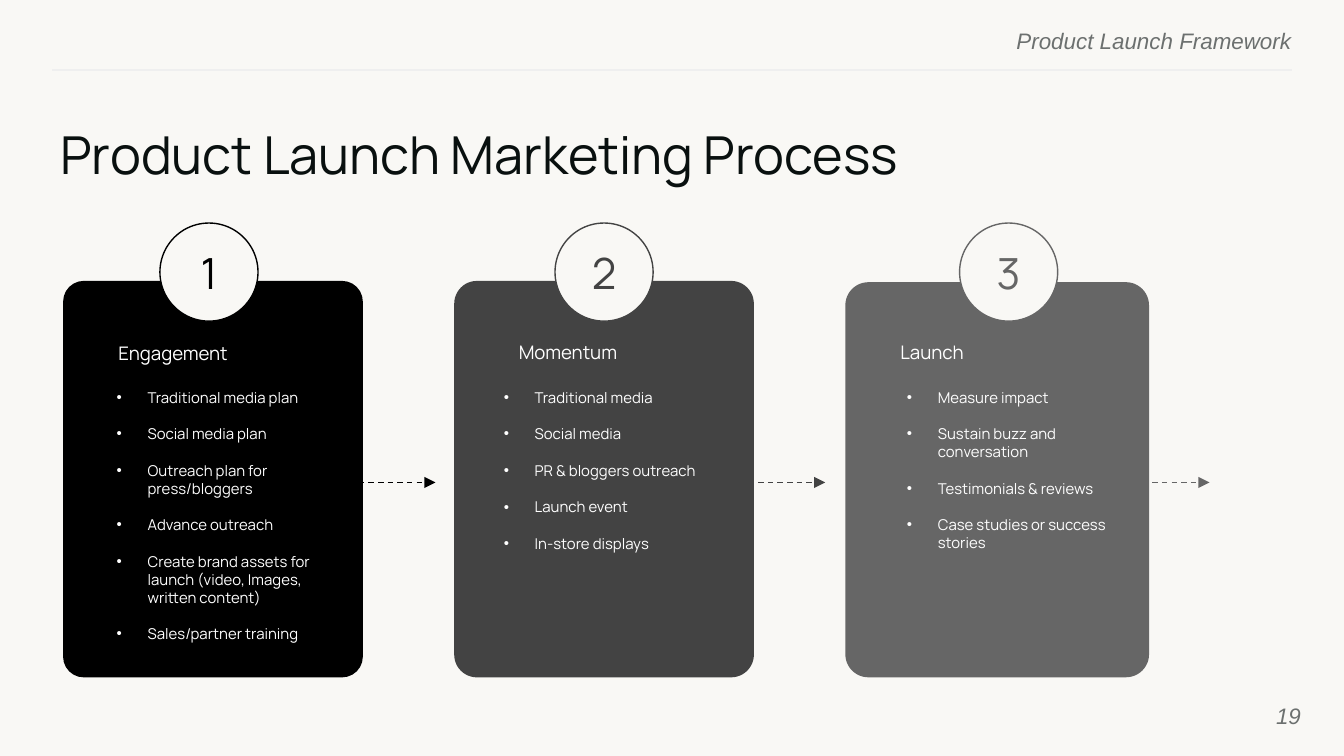
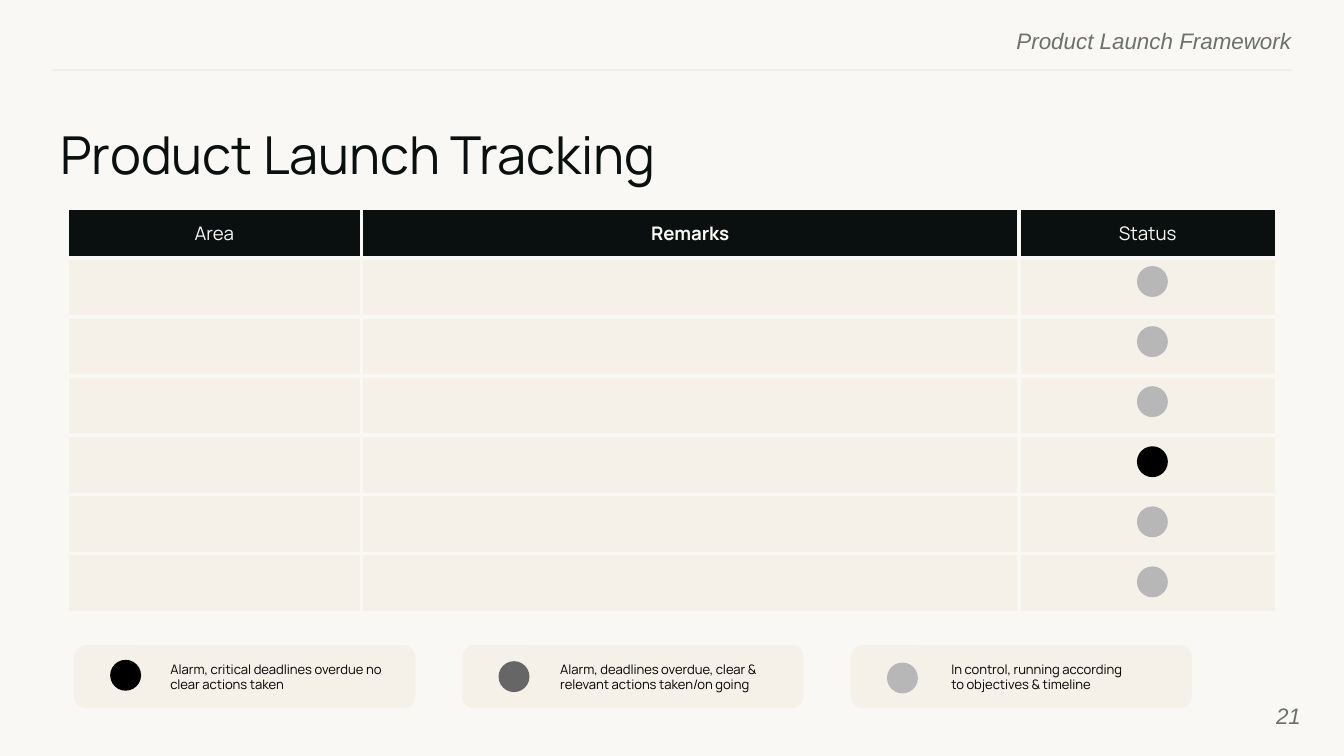
from dataclasses import dataclass

from lxml import etree
from pptx import Presentation
from pptx.dml.color import RGBColor
from pptx.enum import dml, shapes, text
from pptx.oxml import ns
from pptx.util import Inches, Pt


@dataclass(frozen=True)
class Theme:
    paper: str = "F9F8F5"
    ink: str = "09100F"
    sand: str = "F5F1E8"
    rule: str = "EFEFEF"
    note: str = "6C706F"
    white: str = "FFFFFF"
    black: str = "000000"
    dark: str = "434343"
    mid: str = "666666"
    pale: str = "B7B7B7"
    face: str = "Manrope"
    side: str = "Arial"
    title: float = 28
    digit: float = 23
    small: float = 12
    head: float = 10
    body: float = 8
    key: float = 7
    thin: float = 0.75
    gap: float = 2.25


T = Theme()
LEFT, MID, RIGHT = text.PP_ALIGN.LEFT, text.PP_ALIGN.CENTER, text.PP_ALIGN.RIGHT
TOP, CORE = text.MSO_ANCHOR.TOP, text.MSO_ANCHOR.MIDDLE
OVAL, ROUND = shapes.MSO_SHAPE.OVAL, shapes.MSO_SHAPE.ROUNDED_RECTANGLE

STEPS = [
    dict(box=(0.47, 2.09, 2.23, 2.95), curve=0.069, color=T.black, name="Engagement",
         head=(0.39, 0.37), list=(0.3, 1.81), disc=0.72, arrow=1.77,
         items=["Traditional media plan", "Social media plan",
                "Outreach plan for press/bloggers", "Advance outreach",
                "Create brand assets for launch (video, Images, written content)",
                "Sales/partner training"]),
    dict(box=(3.38, 2.09, 2.23, 2.95), curve=0.076, color=T.dark, name="Momentum",
         head=(0.46, 0.36), list=(0.27, 1.89), disc=0.75, arrow=1.76,
         items=["Traditional media", "Social media", "PR & bloggers outreach",
                "Launch event", "In-store displays"]),
    dict(box=(6.29, 2.1, 2.26, 2.94), curve=0.076, color=T.mid, name="Launch",
         head=(0.39, 0.35), list=(0.36, 1.7), disc=0.85, arrow=1.71,
         items=["Measure impact", "Sustain buzz and conversation",
                "Testimonials & reviews", "Case studies or success stories"]),
]
KEYS = [
    (T.black, 0.62, 1.8, ["Alarm, critical deadlines overdue no clear actions taken"]),
    (T.mid, 0.63, 1.99,
     ["Alarm, deadlines overdue, clear & relevant actions taken/on going"]),
    (T.pale, 0.65, 1.71, ["In control, running according", "to objectives & timeline"]),
]
STATES = [T.pale] * 3 + [T.black] + [T.pale] * 2


def tint(code):
    return RGBColor.from_string(code)


def fill(item, code):
    item.fill.solid()
    item.fill.fore_color.rgb = tint(code)


def write(frame, lines, size, color, face=T.face, align=LEFT, anchor=TOP,
          pad=(0, 0), bold=False, slant=False):
    frame.word_wrap = True
    frame.vertical_anchor = anchor
    frame.margin_left = frame.margin_right = Inches(pad[0])
    frame.margin_top = frame.margin_bottom = Inches(pad[1])
    for i, line in enumerate(lines):
        para = frame.add_paragraph() if i else frame.paragraphs[0]
        para.text = line
        para.alignment = align
        font = para.font
        font.name, font.size = face, Pt(size)
        font.bold, font.italic = bold, slant
        font.color.rgb = tint(color)
    return frame.paragraphs


def label(slide, box, lines, size, color, **style):
    area = slide.shapes.add_textbox(*map(Inches, box))
    return write(area.text_frame, lines, size, color, **style)


def block(slide, kind, box, color, edge=None, curve=None):
    shape = slide.shapes.add_shape(kind, *map(Inches, box))
    shape.shadow.inherit = False
    fill(shape, color)
    if edge:
        shape.line.color.rgb = tint(edge)
        shape.line.width = Pt(T.thin)
    else:
        shape.line.fill.background()
    if curve is not None:
        shape.adjustments[0] = curve
    return shape


def dot(slide, x, y, color):
    block(slide, OVAL, (x, y, 0.23, 0.23), color)


def rule(slide, start, end, y, color, arrow=False):
    wire = slide.shapes.add_connector(
        shapes.MSO_CONNECTOR.STRAIGHT, *map(Inches, (start, y, end, y)))
    wire.line.color.rgb = tint(color)
    wire.line.width = Pt(T.thin)
    if arrow:
        wire.line.dash_style = dml.MSO_LINE.DASH
        tip = etree.SubElement(wire.line._get_or_add_ln(), ns.qn("a:tailEnd"))
        tip.set("type", "triangle")
    etree.SubElement(wire._element.spPr, ns.qn("a:effectLst"))


def bullet(para, color):
    props = para._p.get_or_add_pPr()
    props.set("marL", str(Inches(0.23)))
    props.set("indent", str(-Inches(0.23)))
    hue = etree.Element(ns.qn("a:buClr"))
    etree.SubElement(hue, ns.qn("a:srgbClr")).set("val", color)
    face = etree.Element(ns.qn("a:buFont"))
    face.set("typeface", T.side)
    mark = etree.Element(ns.qn("a:buChar"))
    mark.set("char", "•")
    base = props.find(ns.qn("a:defRPr"))
    for part in (hue, face, mark):
        base.addprevious(part)


def border(cell, color):
    props = cell._tc.get_or_add_tcPr()
    for i, side in enumerate(("lnL", "lnR", "lnT", "lnB")):
        line = etree.Element(ns.qn("a:" + side))
        line.set("w", str(Pt(T.gap)))
        paint = etree.SubElement(line, ns.qn("a:solidFill"))
        etree.SubElement(paint, ns.qn("a:srgbClr")).set("val", color)
        props.insert(i, line)


def frame(deck, title, number):
    slide = deck.slides.add_slide(deck.slide_layouts[6])
    fill(slide.background, T.paper)
    side = dict(face=T.side, align=RIGHT, slant=True)
    label(slide, (5.76, 0.2, 3.85, 0.18), ["Product Launch Framework"],
          T.small, T.note, **side)
    rule(slide, 9.61, 0.39, 0.52, T.rule)
    label(slide, (0.45, 0.91, 9.23, 0.51), [title], T.title, T.ink)
    label(slide, (9.08, 5.11, 0.6, 0.43), [number], T.small, T.note,
          anchor=CORE, **side)
    return slide


def card(slide, step, number):
    x, y = step["box"][:2]
    color = step["color"]
    start = x + step["arrow"]
    rule(slide, start, start + 1, 3.59, color, arrow=True)
    block(slide, ROUND, step["box"], color, curve=step["curve"])
    left, down = step["head"]
    head = label(slide, (x + left, y + down, 1.39, 0.3), [step["name"]],
                 T.head, T.white, anchor=CORE, pad=(0.02, 0.02))
    head[0].line_spacing = 1.2
    left, span = step["list"]
    items = label(slide, (x + left, 2.84, span, 2.1), step["items"],
                  T.body, T.white, pad=(0.1, 0.05))
    for i, para in enumerate(items):
        para.space_before = Pt(10 if i else 0)
        bullet(para, T.white)
    items[-1].space_after = Pt(10)
    disc = block(slide, OVAL, (x + step["disc"], 1.66, 0.73, 0.73), T.paper, color)
    write(disc.text_frame, [str(number)], T.digit, color, align=MID,
          anchor=CORE, pad=(0.1, 0.1))


def track(slide, x, y):
    cols, rows = (2.19, 4.89, 1.92), [0.37] + [0.44] * len(STATES)
    grid = slide.shapes.add_table(
        len(rows), len(cols), *map(Inches, (x, y, sum(cols), sum(rows)))).table
    for col, width in zip(grid.columns, cols):
        col.width = Inches(width)
    for row, height in zip(grid.rows, rows):
        row.height = Inches(height)
    for i, row in enumerate(grid.rows):
        for cell in row.cells:
            fill(cell, T.sand if i else T.ink)
            border(cell, T.paper)
            cell.margin_left = cell.margin_right = Inches(0.07)
            cell.margin_top = cell.margin_bottom = Inches(0.04)
            cell.vertical_anchor = CORE
    for cell, name in zip(grid.rows[0].cells, ("Area", "Remarks", "Status")):
        para = cell.text_frame.paragraphs[0]
        para.text = name
        para.alignment = MID
        font = para.font
        font.name, font.size = T.face, Pt(T.head)
        font.bold = name == "Remarks"
        font.color.rgb = tint(T.paper)
    for i, color in enumerate(STATES):
        dot(slide, x + 7.96, y + 0.43 + 0.447 * i, color)


def legend(slide, x, y):
    for i, (color, left, width, lines) in enumerate(KEYS):
        start = x + 2.89 * i
        block(slide, ROUND, (start, y, 2.54, 0.47), T.sand, curve=0.195)
        dot(slide, start + 0.27, y + 0.11 + 0.01 * i, color)
        label(slide, (start + left, y + 0.07, width, 0.34), lines,
              T.key, T.black, pad=(0.1, 0.05))


def process(deck):
    slide = frame(deck, "Product Launch Marketing Process", "19")
    for i, step in enumerate(STEPS, 1):
        card(slide, step, i)


def status(deck):
    slide = frame(deck, "Product Launch Tracking", "21")
    track(slide, 0.5, 1.55)
    legend(slide, 0.55, 4.8)


def main():
    deck = Presentation()
    deck.slide_width = Inches(10)
    deck.slide_height = deck.slide_width * 9 // 16
    process(deck)
    status(deck)
    deck.save("out.pptx")


if __name__ == "__main__":
    main()
